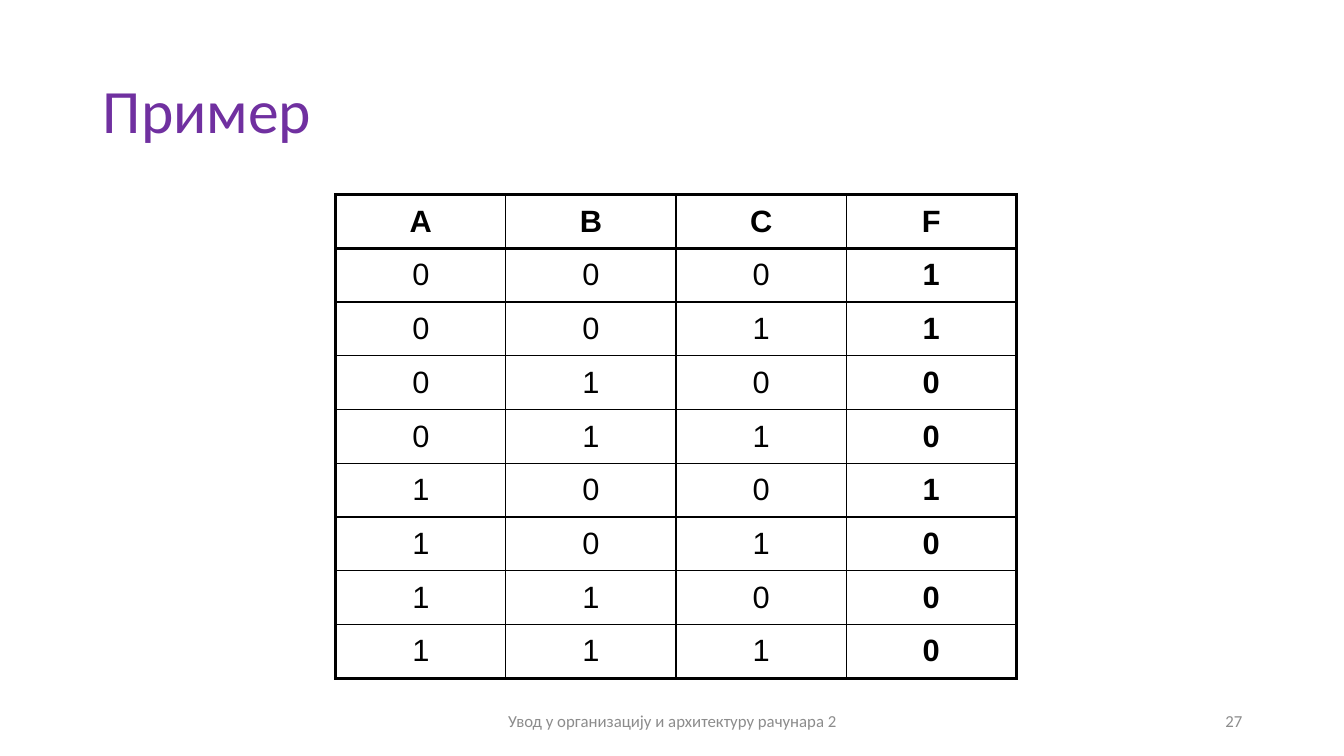
from lxml import etree
from pptx import Presentation
from pptx import util as u
from pptx.dml.color import RGBColor
from pptx.enum import text
from pptx.oxml import parse_xml
from pptx.oxml.ns import nsdecls, qn

THICK, THIN = 2.25, 1


def color(value):
    return RGBColor.from_string(value)


class SlideBuilder:
    ink, accent, muted = "000000", "7030A0", "8C8C8C"
    body_font, table_font = "Calibri", "Arial"

    def __init__(self, presentation):
        self.slide = presentation.slides.add_slide(presentation.slide_layouts[5])

    def format_text(self, frame, font, size, fill, align, bold=False):
        frame.vertical_anchor = text.MSO_ANCHOR.MIDDLE
        paragraph = frame.paragraphs[0]
        paragraph.alignment = align
        for run in paragraph.runs:
            run.font.name, run.font.size, run.font.bold = font, u.Pt(size), bold
            run.font.color.rgb = color(fill)

    def place(self, shape, left, top, width, height):
        shape.left, shape.top = u.Inches(left), u.Inches(top)
        shape.width, shape.height = u.Inches(width), u.Inches(height)

    def title(self, words, *box):
        shape = self.slide.shapes.title
        self.place(shape, *box)
        frame = shape.text_frame
        frame.text = words
        self.format_text(frame, self.body_font, 44, self.accent, text.PP_ALIGN.LEFT)
        paragraph = frame.paragraphs[0]
        paragraph.line_spacing = 0.9
        shadow = parse_xml(
            f'<a:effectLst {nsdecls("a")}>'
            '<a:outerShdw blurRad="38100" dist="38100" dir="8100000" algn="tr" rotWithShape="0">'
            '<a:prstClr val="black"><a:alpha val="40000"/></a:prstClr>'
            '</a:outerShdw></a:effectLst>')
        properties = paragraph.runs[0].font._element
        properties.find(qn("a:solidFill")).addnext(shadow)

    def label(self, words, align, left, top, width, height):
        box = self.slide.shapes.add_textbox(*map(u.Inches, (left, top, width, height)))
        frame = box.text_frame
        frame.word_wrap = True
        frame.text = words
        self.format_text(frame, self.body_font, 12, self.muted, align)

    def border(self, cell, side, width):
        line = etree.SubElement(cell._tc.get_or_add_tcPr(), qn(f"a:ln{side}"),
                                w=str(u.Pt(width)))
        fill = etree.SubElement(line, qn("a:solidFill"))
        etree.SubElement(fill, qn("a:srgbClr"), val=self.ink)

    def truth_table(self, rows, left, top, width, height):
        """Draw a grid with a thick frame, a ruled header and a bold result column."""
        last_row, last_column = len(rows) - 1, len(rows[0]) - 1
        table = self.slide.shapes.add_table(
            len(rows), len(rows[0]), *map(u.Inches, (left, top, width, height))).table
        table.first_row = table.horz_banding = False
        for r, row in enumerate(rows):
            for c, value in enumerate(row):
                cell = table.cell(r, c)
                cell.text = value
                self.format_text(cell.text_frame, self.table_font, 22, self.ink,
                                 text.PP_ALIGN.CENTER, bold=r == 0 or c == last_column)
                cell.vertical_anchor = text.MSO_ANCHOR.MIDDLE
                thick_sides = {"L": c == 0, "R": c == last_column,
                               "T": r <= 1, "B": r in (0, last_row)}
                for side, is_thick in thick_sides.items():
                    self.border(cell, side, THICK if is_thick else THIN)
                cell.fill.background()


def main():
    presentation = Presentation()
    presentation.slide_width, presentation.slide_height = u.Inches(13.33), u.Inches(7.5)
    builder = SlideBuilder(presentation)
    builder.title("Пример", 0.92, 0.4, 11.5, 1.45)

    results = "11001000"
    rows = ["АBCF"] + [f"{number:03b}{result}" for number, result in enumerate(results)]
    builder.truth_table(rows, 3.33, 1.93, 6.75, 4.8)

    builder.label("Увод у организацију и архитектуру рачунара 2",
                  text.PP_ALIGN.CENTER, 4.42, 6.95, 4.5, 0.4)
    builder.label("27", text.PP_ALIGN.RIGHT, 9.42, 6.95, 3, 0.4)
    presentation.save("out.pptx")


if __name__ == "__main__":
    main()
